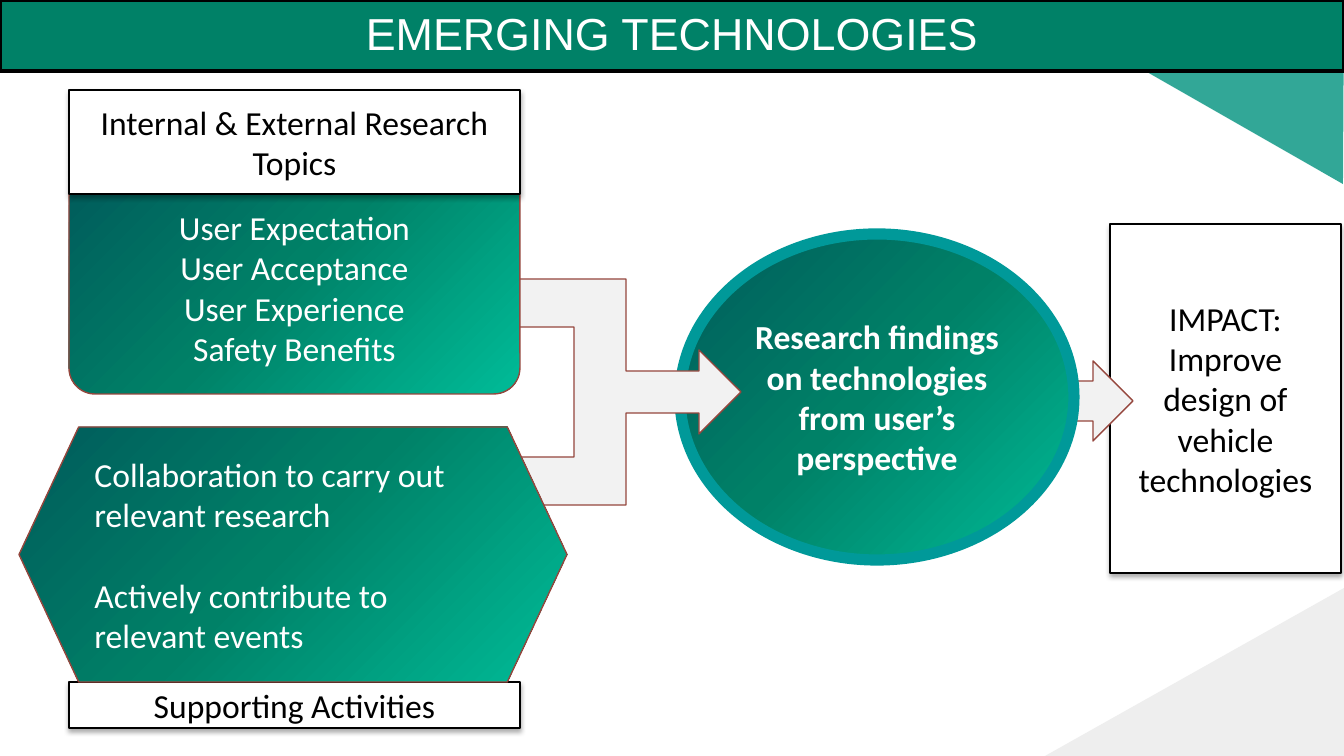
import copy

import pptx
import pptx.util
import pptx.dml.color
import pptx.enum.shapes
import pptx.enum.text
import pptx.oxml
import pptx.oxml.ns

PX = 9144000 / 1008
SHAPE = pptx.enum.shapes.MSO_SHAPE
ALIGN = pptx.enum.text.PP_ALIGN
GRADIENT = [(0, "005B5B"), (0.48, "008167"), (0.97, "00B895")]
BLACK, WHITE, GREEN, BROWN, PALE = "000000", "FFFFFF", "008167", "95463D", "F2F2F2"
SHADOW = (
    '<a:effectLst xmlns:a="http://schemas.openxmlformats.org/drawingml/2006/main">'
    '<a:outerShdw blurRad="44450" dist="27940" dir="5400000" rotWithShape="0">'
    '<a:srgbClr val="000000"><a:alpha val="32000"/></a:srgbClr>'
    '</a:outerShdw></a:effectLst>'
)


def px(n):
    return pptx.util.Emu(round(n * PX))


def rgb(value):
    return pptx.dml.color.RGBColor.from_string(value)


def set_all(obj, values):
    for name, value in values.items():
        setattr(obj, name, value)


def fill_gradient(sp):
    sp.fill.gradient()
    sp.fill.gradient_angle = 315
    first = sp._element.spPr.find(".//" + pptx.oxml.ns.qn("a:gs"))
    first.addnext(copy.deepcopy(first))
    for stop, (position, color) in zip(sp.fill.gradient_stops, GRADIENT):
        stop.position = position
        stop.color.rgb = rgb(color)


def paint(sp, fill=None, line=None, width=1):
    if fill:
        sp.fill.solid()
        sp.fill.fore_color.rgb = rgb(fill)
    else:
        fill_gradient(sp)
    if line:
        sp.line.color.rgb = rgb(line)
        sp.line.width = pptx.util.Pt(width)
    else:
        sp.line.fill.background()


def write(sp, lines, color, size=24, font="Calibri", bold=False,
          align=ALIGN.CENTER, gap=0, spacing=1.0, **margins):
    tf = sp.text_frame
    set_all(tf, {"word_wrap": True,
                 "auto_size": pptx.enum.text.MSO_AUTO_SIZE.NONE,
                 "vertical_anchor": pptx.enum.text.MSO_ANCHOR.MIDDLE})
    set_all(tf, {name: px(n) for name, n in margins.items()})
    for i, line in enumerate(lines):
        p = tf.add_paragraph() if i else tf.paragraphs[0]
        set_all(p, {"alignment": align, "line_spacing": spacing})
        if i:
            p.space_before = pptx.util.Pt(gap)
        r = p.add_run()
        r.text = line
        set_all(r.font, {"name": font, "size": pptx.util.Pt(size), "bold": bold})
        r.font.color.rgb = rgb(color)


def add_block(s, kind, box, fill=None, line=BROWN, width=1):
    sp = s.shapes.add_shape(kind, *map(px, box))
    sp.shadow.inherit = False
    paint(sp, fill, line, width)
    return sp


def add_card(s, box, lines, **margins):
    sp = add_block(s, SHAPE.RECTANGLE, box, WHITE, BLACK)
    spPr = sp._element.spPr
    spPr.replace(spPr.find(pptx.oxml.ns.qn("a:effectLst")),
                 pptx.oxml.parse_xml(SHADOW))
    write(sp, lines, BLACK, **margins)


def add_outline(s, points, fill, line=None):
    start, *rest = [(px(x), px(y)) for x, y in points]
    builder = s.shapes.build_freeform(*start)
    builder.add_line_segments(rest, close=True)
    sp = builder.convert_to_shape()
    sp.shadow.inherit = False
    paint(sp, fill, line)


def add_merge_arrow(s, axis):
    half = [(574, 65), (438, 65), (438, 113), (626, 113),
            (626, 21), (699, 21), (699, 42)]
    upper = [(x, axis - d) for x, d in half]
    lower = [(x, axis + d) for x, d in reversed(half)]
    add_outline(s, upper + [(741, axis)] + lower, PALE, BROWN)


def add_title(s, text):
    title = s.shapes.title
    set_all(title, {"left": 0, "top": 0, "width": px(1344), "height": px(71)})
    paint(title, GREEN, BLACK, 3)
    write(title, [text], WHITE, size=32, font="Arial", spacing=0.9)
    s.shapes._spTree.append(title._element)


def main():
    prs = pptx.Presentation()
    set_all(prs, {"slide_width": px(1344), "slide_height": px(756)})
    s = prs.slides.add_slide(prs.slide_layouts[5])

    add_outline(s, [(1344, 588), (1344, 756), (1045, 756)], "EEEEEE")
    add_outline(s, [(1344, 0), (1343, 184), (1021, 0)], "32A797")

    add_card(s, (1110, 224, 231, 349),
             ["IMPACT:", "Improve design of vehicle technologies"],
             margin_left=18, margin_right=18)
    add_block(s, SHAPE.RIGHT_ARROW, (1044, 361, 89, 80), PALE)

    findings = add_block(s, SHAPE.OVAL, (680, 234, 394, 326),
                         line="009999", width=8)
    write(findings, ["Research findings on technologies from user’s perspective"],
          WHITE, bold=True)
    add_merge_arrow(s, 392)
    add_title(s, "EMERGING TECHNOLOGIES")

    add_card(s, (69, 682, 451, 46), ["Supporting Activities"])
    topics = add_block(s, SHAPE.ROUNDED_RECTANGLE, (69, 171, 451, 223))
    topics.adjustments[0] = 0.117
    write(topics, ["User Expectation", "User Acceptance",
                   "User Experience", "Safety Benefits"], WHITE, margin_top=15)

    activities = add_block(s, SHAPE.HEXAGON, (19, 427, 548, 255))
    activities.adjustments[0] = 0.234
    write(activities, ["Collaboration to carry out relevant research",
                       "Actively contribute to relevant events"],
          WHITE, align=ALIGN.LEFT, gap=29)
    add_card(s, (69, 90, 451, 104), ["Internal & External Research Topics"])

    prs.save("out.pptx")


if __name__ == "__main__":
    main()
